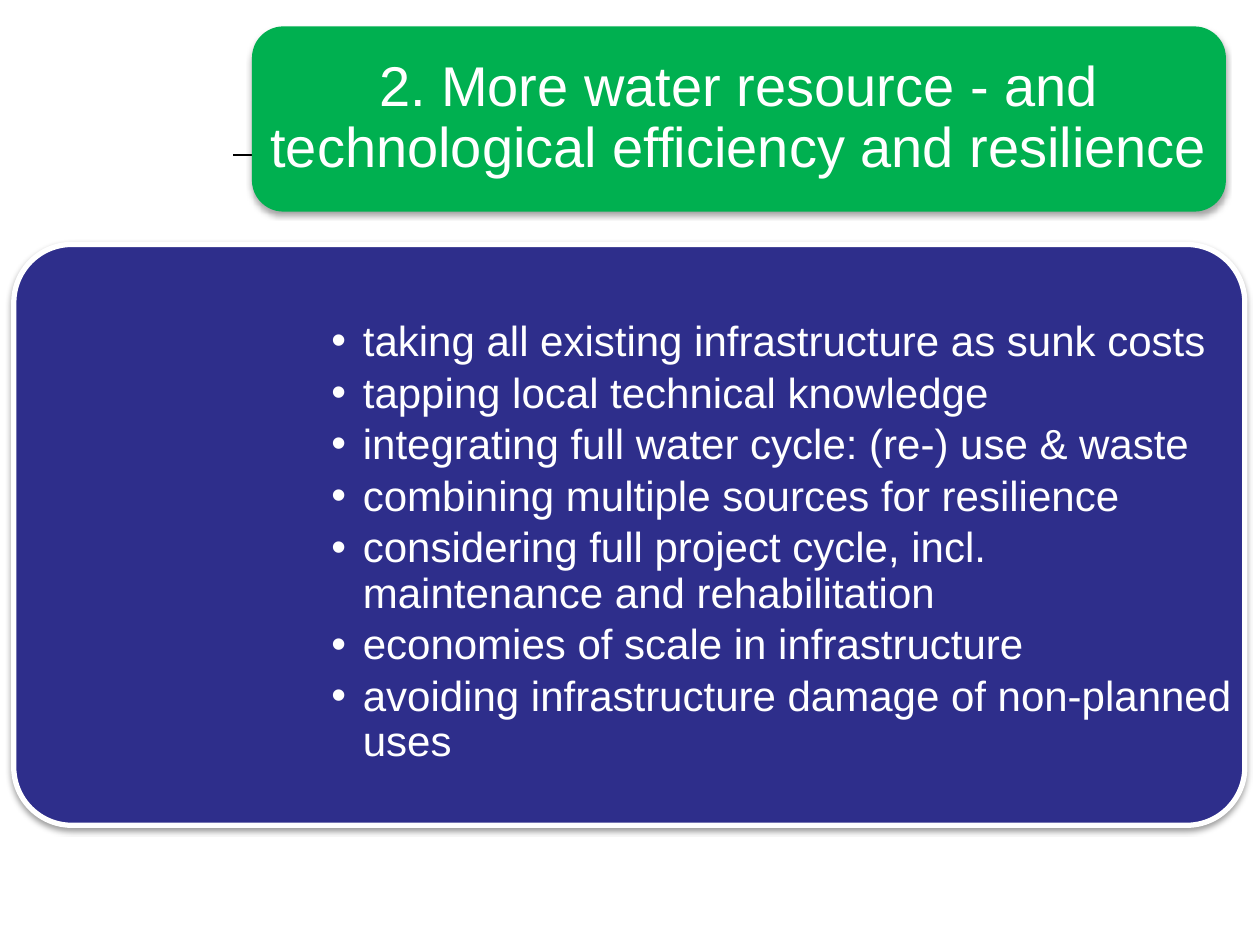
from lxml.etree import SubElement
from pptx import Presentation
from pptx.dml.color import RGBColor
from pptx.enum.shapes import MSO_CONNECTOR, MSO_SHAPE
from pptx.enum.text import MSO_ANCHOR, MSO_AUTO_SIZE, PP_ALIGN
from pptx.oxml.ns import qn
from pptx.util import Emu, Inches, Pt

COLORS = {"line": "000000", "text": "FFFFFF", "title": "00B050", "panel": "2E2E8B"}
TITLE_BOX = (2, 0.21, 7.73, 1.47)
PANEL_BOX = (0.11, 1.94, 9.77, 4.61)
LIST_BOX = (2.63, 2.54, 7.15, 3.9)
TITLE = "2. More water resource - and technological efficiency and resilience"
MEASURES = [
    "taking all existing infrastructure as sunk costs",
    "tapping local technical knowledge",
    "integrating full water cycle: (re-) use & waste",
    "combining multiple sources for resilience",
    "considering full project cycle, incl. maintenance and rehabilitation",
    "economies of scale in infrastructure",
    "avoiding infrastructure damage of non-planned uses",
]


def rgb(name):
    return RGBColor.from_string(COLORS[name])


def add_shadow(shape, distance, opacity):
    """Give the shape a soft shadow that falls straight down."""
    effects = SubElement(shape.element.spPr, qn("a:effectLst"))
    shadow = SubElement(effects, qn("a:outerShdw"), blurRad=str(Pt(3.1)),
                        dist=str(Pt(distance)), dir="5400000", rotWithShape="0")
    color = SubElement(shadow, qn("a:srgbClr"), val=COLORS["line"])
    SubElement(color, qn("a:alpha"), val=str(opacity * 1000))


def add_rounded_box(slide, box, fill, corner, distance, opacity, border=0):
    shape = slide.shapes.add_shape(MSO_SHAPE.ROUNDED_RECTANGLE, *map(Inches, box))
    shape.adjustments[0] = corner
    shape.fill.solid()
    shape.fill.fore_color.rgb = rgb(fill)
    if border:
        shape.line.color.rgb = rgb("text")
        shape.line.width = Pt(border)
    else:
        shape.line.fill.background()
    add_shadow(shape, distance, opacity)


def add_rule(slide, left, right, top):
    rule = slide.shapes.add_connector(MSO_CONNECTOR.STRAIGHT, *map(Inches, (left, top, right, top)))
    rule.line.color.rgb = rgb("line")
    rule.line.width = Pt(0.75)
    SubElement(rule.element.spPr, qn("a:effectLst"))


def place_text(placeholder, box, anchor, inset):
    """Position a placeholder in front of the boxes and return its text frame."""
    placeholder.left, placeholder.top, placeholder.width, placeholder.height = map(Inches, box)
    placeholder.element.getparent().append(placeholder.element)
    frame = placeholder.text_frame
    frame.word_wrap = True
    frame.auto_size = MSO_AUTO_SIZE.NONE
    frame.vertical_anchor = anchor
    frame.margin_left = frame.margin_right = Inches(inset)
    frame.margin_top = frame.margin_bottom = Inches(inset)
    return frame


def write_paragraph(paragraph, text, size, after=0):
    paragraph.line_spacing = 0.9
    paragraph.space_before = Pt(0)
    paragraph.space_after = Pt(after)
    run = paragraph.add_run()
    run.text = text
    run.font.name = "Arial"
    run.font.size = Pt(size)
    run.font.color.rgb = rgb("text")


def add_bullet(paragraph, indent):
    properties = paragraph._p.get_or_add_pPr()
    properties.set("marL", str(Inches(2 * indent) - Inches(indent)))
    properties.set("indent", str(Emu(-Inches(indent))))
    SubElement(properties, qn("a:buFont"), typeface="Arial")
    SubElement(properties, qn("a:buChar"), char="•")


def write_title(slide):
    frame = place_text(slide.shapes.title, TITLE_BOX, MSO_ANCHOR.MIDDLE, 0.13)
    paragraph = frame.paragraphs[0]
    paragraph.alignment = PP_ALIGN.CENTER
    write_paragraph(paragraph, TITLE, 32)


def write_list(slide):
    frame = place_text(slide.placeholders[1], LIST_BOX, MSO_ANCHOR.TOP, 0)
    for index, text in enumerate(MEASURES):
        paragraph = frame.add_paragraph() if index else frame.paragraphs[0]
        add_bullet(paragraph, 0.25)
        write_paragraph(paragraph, text, 24, after=3.6)


def main():
    presentation = Presentation()
    presentation.slide_width, presentation.slide_height = Inches(10), Inches(7.5)
    slide = presentation.slides.add_slide(presentation.slide_layouts[1])
    add_rule(slide, 1.85, 9.17, 1.23)
    add_rounded_box(slide, PANEL_BOX, "panel", 0.1, 1.6, 38, border=3)
    add_rounded_box(slide, TITLE_BOX, "title", 0.17, 1.8, 35)
    write_title(slide)
    write_list(slide)
    presentation.save("out.pptx")


if __name__ == "__main__":
    main()
